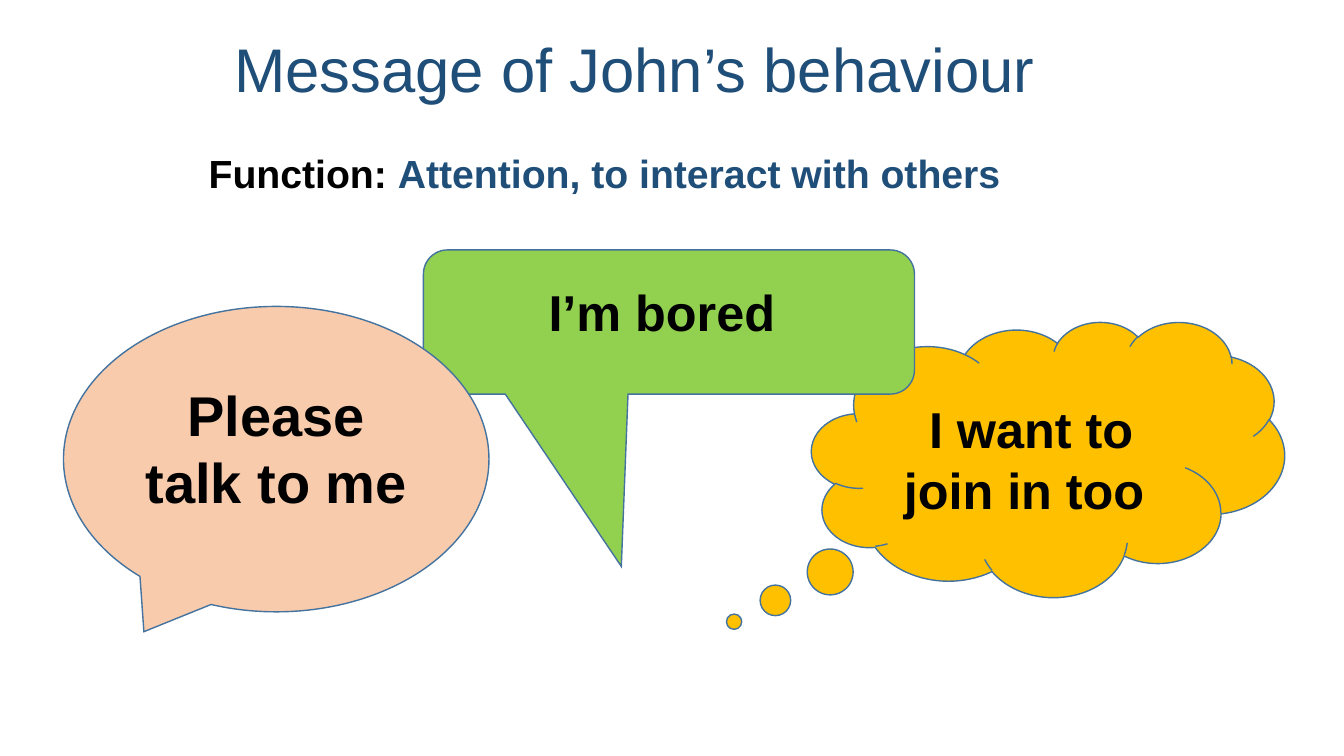
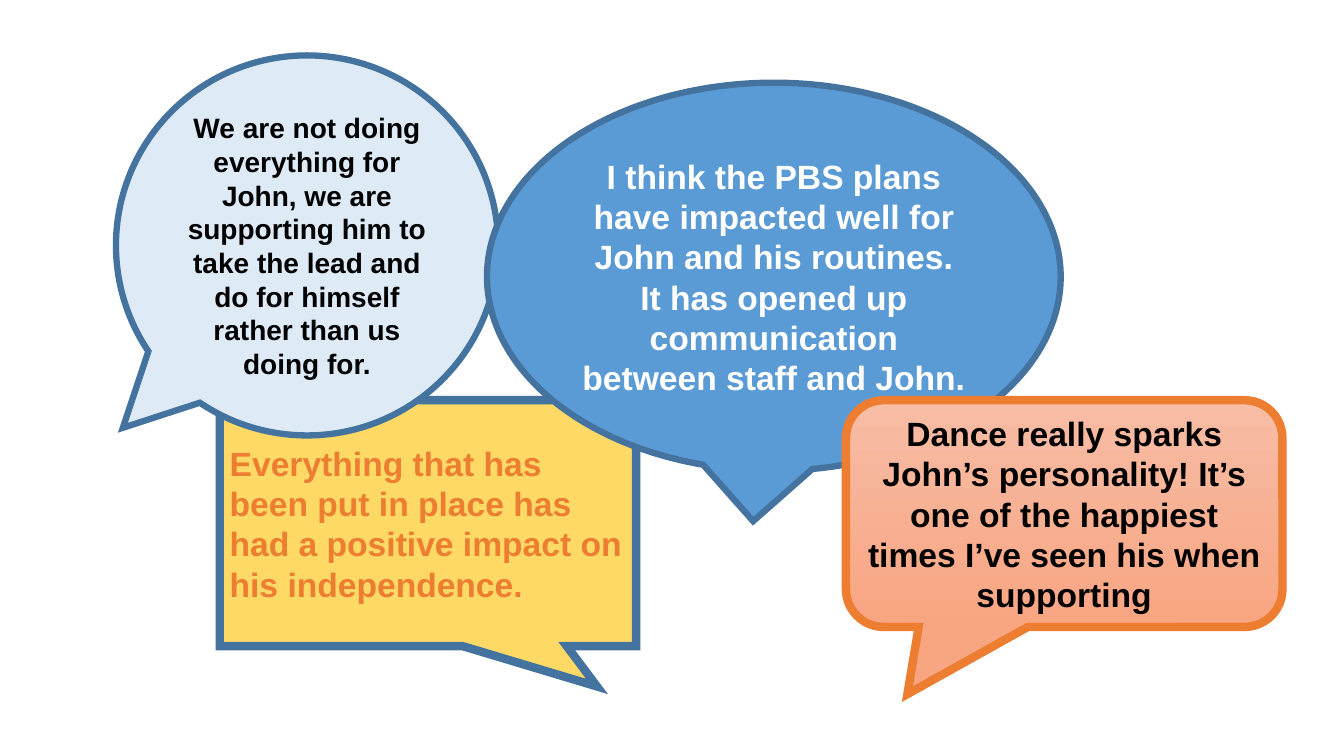
from lxml.etree import SubElement
from pptx import Presentation
from pptx.dml.color import RGBColor
from pptx.enum.shapes import MSO_SHAPE as SHAPE
from pptx.enum.text import MSO_ANCHOR as ANCHOR, MSO_AUTO_SIZE as AUTO_SIZE, PP_ALIGN as ALIGN
from pptx.oxml.ns import qn
from pptx.util import Inches, Pt

FONT = "Arial"
BLACK, WHITE, NAVY = "000000", "FFFFFF", "1F4E79"
OUTLINE, ORANGE = "43739E", "ED7D31"
ROUNDING = 0.167


def rgb(value):
    """Turn a hex string into a colour."""
    return RGBColor.from_string(value)


def style_font(font, size, color, bold=True):
    """Set the shared typeface with a size, colour and weight."""
    font.name = FONT
    font.size = Pt(size)
    font.bold = bold
    font.color.rgb = rgb(color)


def place(shape, left, top, width, height):
    """Move and size a placeholder in inches."""
    shape.left, shape.top = Inches(left), Inches(top)
    shape.width, shape.height = Inches(width), Inches(height)


def add_title(slide, text):
    """Fill the title placeholder."""
    title = slide.shapes.title
    place(title, 0.63, 0, 11.5, 1.44)
    frame = title.text_frame
    frame.text = text
    frame.vertical_anchor = ANCHOR.MIDDLE
    frame.auto_size = AUTO_SIZE.NONE
    heading = frame.paragraphs[0]
    heading.alignment = ALIGN.CENTER
    heading.line_spacing = 0.9
    style_font(heading.runs[0].font, 44, NAVY, bold=False)


def add_function_line(slide, label, answer):
    """Fill the body placeholder with a label and its answer."""
    body = slide.placeholders[1]
    place(body, 0.3, 1.48, 11.5, 4.76)
    frame = body.text_frame
    frame.auto_size = AUTO_SIZE.NONE
    frame.vertical_anchor = ANCHOR.TOP
    line = frame.paragraphs[0]
    properties = line._p.get_or_add_pPr()
    properties.set("marL", "0")
    properties.set("indent", "0")
    SubElement(properties, qn("a:buNone"))
    line.alignment = ALIGN.CENTER
    line.line_spacing = 0.9
    line.space_before = Pt(0)
    for text, color in ((label, BLACK), (answer, NAVY)):
        run = line.add_run()
        run.text = text
        style_font(run.font, 28, color)


def paint(fill, colors):
    """Fill with one colour, or with a gradient from top to bottom."""
    if len(colors) == 1:
        fill.solid()
        fill.fore_color.rgb = rgb(colors[0])
        return
    fill.gradient()
    fill.gradient_angle = 270
    for stop, color in zip(fill.gradient_stops, colors):
        stop.color.rgb = rgb(color)


def add_callout(slide, kind, box, tail, colors, text, size, color=BLACK,
                outline=OUTLINE, weight=1, align=ALIGN.CENTER, lift=0):
    """Draw a speech callout; lift raises its text, or lowers it if negative."""
    callout = slide.shapes.add_shape(kind, *map(Inches, box))
    for index, value in enumerate(tail):
        callout.adjustments[index] = value
    callout.shadow.inherit = False
    paint(callout.fill, colors)
    callout.line.color.rgb = rgb(outline)
    callout.line.width = Pt(weight)
    SubElement(callout.line._get_or_add_ln(), qn("a:miter"), lim="800000")
    frame = callout.text_frame
    frame.word_wrap = True
    frame.vertical_anchor = ANCHOR.MIDDLE
    frame.margin_top = Inches(0.05 + max(-2 * lift, 0))
    frame.margin_bottom = Inches(0.05 + max(2 * lift, 0))
    frame.text = text
    message = frame.paragraphs[0]
    message.alignment = align
    style_font(message.runs[0].font, size, color)


def build_message_slide(deck):
    """Show what John's behaviour says."""
    slide = deck.slides.add_slide(deck.slide_layouts[1])
    add_title(slide, "Message of John’s behaviour ")
    add_function_line(slide, "Function: ", "Attention, to interact with others ")
    add_callout(slide, SHAPE.CLOUD_CALLOUT, (8.05, 3.19, 4.69, 2.73), (-0.664, 0.591),
                ["FFC000"], "I want to join in too ", 36, lift=-0.06)
    add_callout(slide, SHAPE.ROUNDED_RECTANGULAR_CALLOUT, (4.2, 2.48, 4.87, 1.43),
                (-0.097, 1.696, ROUNDING), ["92D050"], "I’m bored ", 36, lift=0.11)
    add_callout(slide, SHAPE.OVAL_CALLOUT, (0.63, 3.04, 4.22, 3.03), (-0.311, 0.565),
                ["F8CBAD"], "Please talk to me", 40, lift=0.11)


def build_feedback_slide(deck):
    """Show what staff say about the plans."""
    slide = deck.slides.add_slide(deck.slide_layouts[6])
    add_callout(slide, SHAPE.RECTANGULAR_CALLOUT, (2.18, 3.97, 4.13, 2.44), (0.406, 0.664),
                ["FFD966"],
                "Everything that has been put in place has had a positive impact on "
                "his independence.",
                24, color=ORANGE, weight=6, align=ALIGN.LEFT)
    add_callout(slide, SHAPE.OVAL_CALLOUT, (1.15, 0.55, 3.79, 3.77), (-0.482, 0.48),
                ["DEEBF7"],
                "We are not doing everything for John, we are supporting him to take "
                "the lead and do for himself rather than us doing for.",
                20, weight=4.5)
    add_callout(slide, SHAPE.OVAL_CALLOUT, (4.83, 0.82, 5.69, 3.85), (-0.036, 0.63),
                ["5B9BD5"],
                "I think the PBS plans have impacted well for John and his routines. "
                "It has opened up communication between staff and John.",
                24, color=WHITE, weight=4.5)
    add_callout(slide, SHAPE.ROUNDED_RECTANGULAR_CALLOUT, (8.39, 3.97, 4.33, 2.25),
                (-0.359, 0.796, ROUNDING), ["F7BDA5", "F8A582"],
                "Dance really sparks John’s personality! It’s one of the happiest "
                "times I’ve seen his when supporting",
                24, outline=ORANGE, weight=6)


def main():
    """Build and save the deck."""
    deck = Presentation()
    deck.slide_width, deck.slide_height = Inches(13.33), Inches(7.5)
    build_message_slide(deck)
    build_feedback_slide(deck)
    deck.save("out.pptx")


if __name__ == "__main__":
    main()
